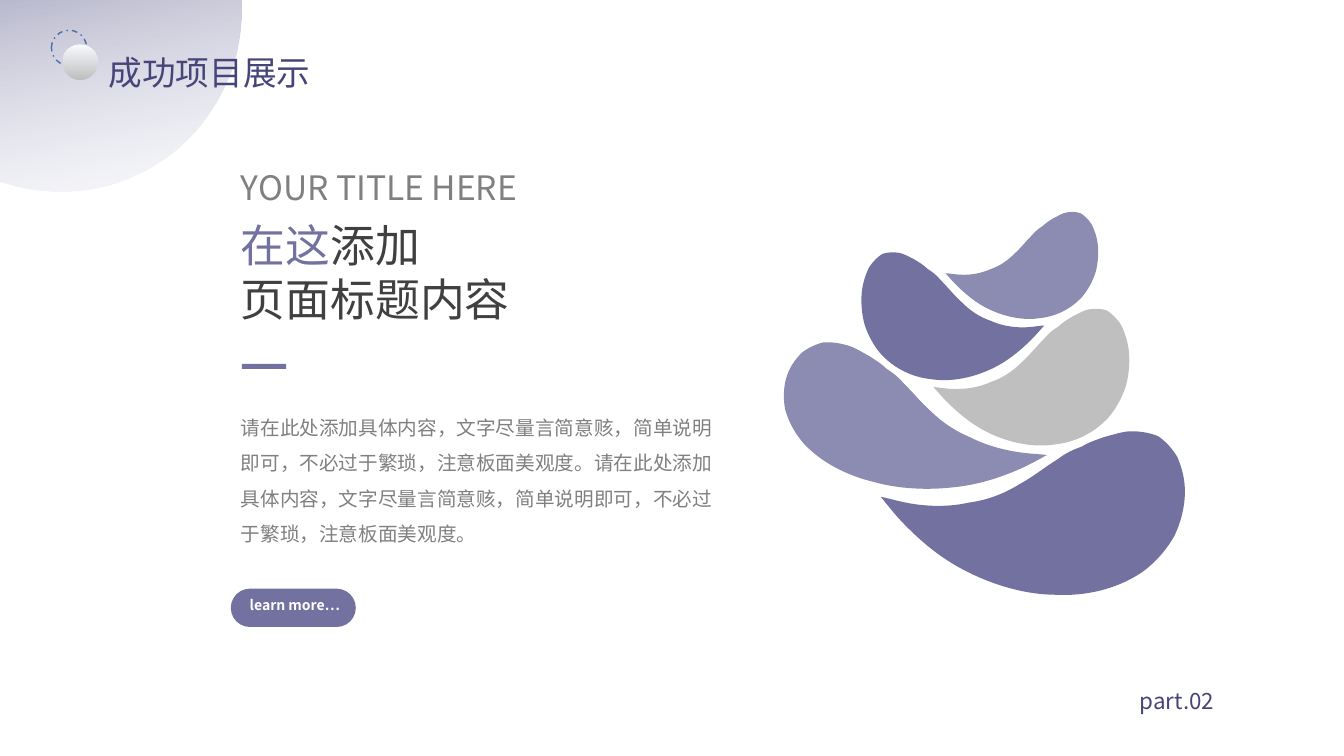
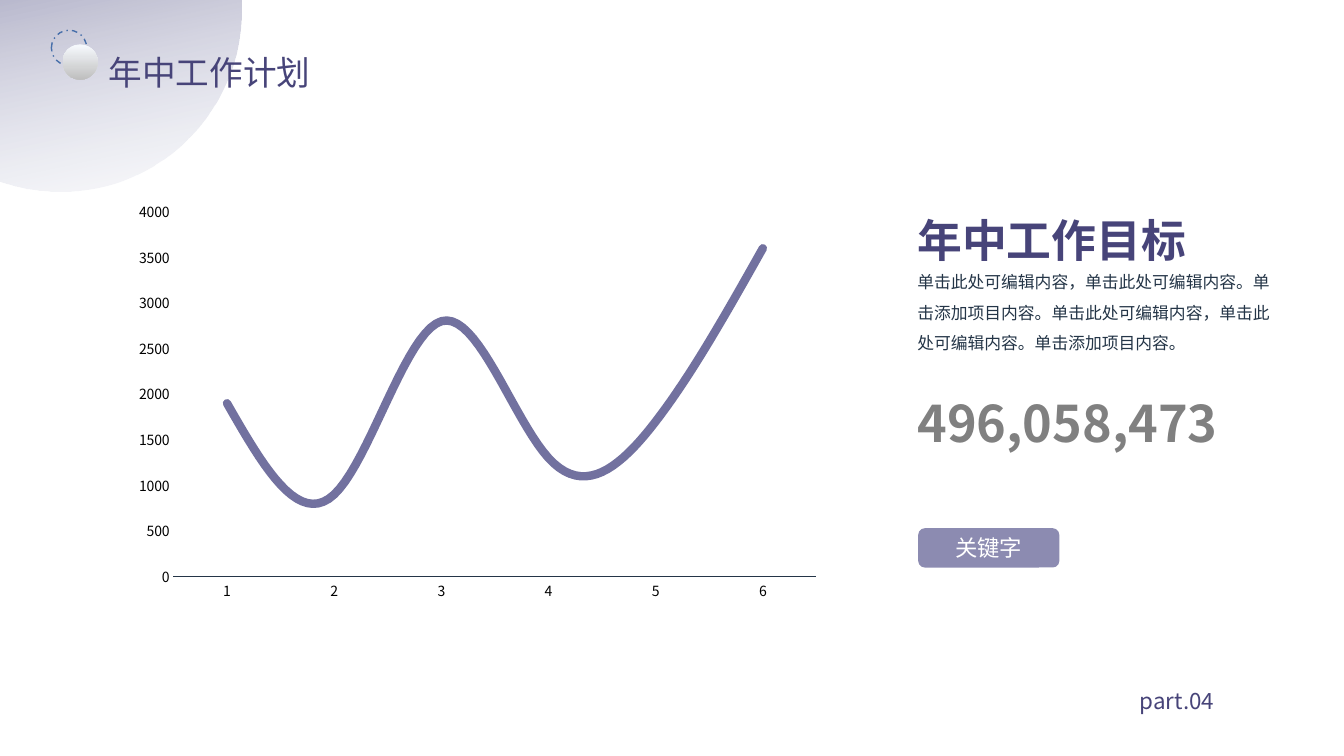
from lxml.etree import SubElement
from pptx import Presentation
from pptx.chart.data import CategoryChartData
from pptx.dml.color import RGBColor
from pptx.enum.chart import XL_CHART_TYPE, XL_MARKER_STYLE, XL_TICK_MARK
from pptx.enum.dml import MSO_LINE
from pptx.enum.shapes import MSO_SHAPE as SHAPE
from pptx.enum.text import MSO_ANCHOR, MSO_AUTO_SIZE, PP_ALIGN as ALIGN
from pptx.oxml.ns import qn
from pptx.util import Pt

PX = 9144
FONT = "Noto Sans CJK SC"

INDIGO = RGBColor(0x47, 0x44, 0x79)
VIOLET = RGBColor(0x72, 0x71, 0x9F)
LILAC = RGBColor(0x8C, 0x8B, 0xB1)
SILVER = RGBColor(0xBF, 0xBF, 0xBF)
GRAY = RGBColor(0x80, 0x80, 0x80)
CHARCOAL = RGBColor(0x40, 0x40, 0x40)
NAVY = RGBColor(0x24, 0x35, 0x47)
BLUE = RGBColor(0x47, 0x6F, 0xAA)
ICE = RGBColor(0xF7, 0xFA, 0xFE)
WHITE = RGBColor(0xFF, 0xFF, 0xFF)
BLACK = RGBColor(0, 0, 0)

PROJECT = dict(
    title="成功项目展示",
    part="part.02",
    kicker="YOUR TITLE HERE",
    heading=[[("在这", VIOLET), ("添加", None)], [("页面标题内容", None)]],
    body="请在此处添加具体内容，文字尽量言简意赅，简单说明即可，不必过于繁琐，注意板面美观度。"
         "请在此处添加具体内容，文字尽量言简意赅，简单说明即可，不必过于繁琐，注意板面美观度。",
    button="learn more…",
)
PLAN = dict(
    title="年中工作计划",
    part="part.04",
    heading="年中工作目标",
    body="单击此处可编辑内容，单击此处可编辑内容。单击添加项目内容。"
         "单击此处可编辑内容，单击此处可编辑内容。单击添加项目内容。",
    figure="496,058,473",
    keyword="关键字",
    months=["1", "2", "3", "4", "5", "6"],
    values=[1900, 900, 2800, 1300, 1700, 3600],
)

LEAF_SIZE = (195, 138)
LEAF_START = (0, 78)
LEAF_CURVES = [
    ((3, 81), (10, 90), (20, 99)),
    ((31, 109), (45, 120), (63, 127)),
    ((80, 134), (101, 138), (120, 135)),
    ((140, 133), (158, 124), (171, 111)),
    ((172, 110), (172, 110), (173, 109)),
    ((181, 100), (187, 89), (191, 77)),
    ((194, 66), (195, 54), (194, 43)),
    ((193, 33), (190, 24), (186, 16)),
    ((182, 10), (177, 5), (172, 2)),
    ((166, 0), (160, 0), (154, 1)),
    ((149, 2), (144, 5), (138, 8)),
    ((133, 11), (128, 14), (124, 18)),
    ((119, 21), (114, 25), (110, 30)),
    ((110, 30), (109, 31), (109, 31)),
    ((102, 38), (96, 46), (87, 54)),
    ((79, 62), (69, 69), (57, 73)),
    ((46, 78), (34, 80), (23, 80)),
    ((13, 80), (4, 78), (0, 78)),
]
LEAVES = [
    ((926, 306, 195, 138), False, 0, SILVER),
    ((854, 250, 182, 129), True, 0, VIOLET),
    ((938, 210, 152, 108), False, 0, LILAC),
    ((874, 414, 300, 176), False, 7.8, VIOLET),
    ((773, 354, 269, 133), True, 9.6, LILAC),
]


def emu(box):
    return [length * PX for length in box]


def add_shape(slide, kind, box, color=None):
    shape = slide.shapes.add_shape(kind, *emu(box))
    shape.shadow.inherit = False
    shape.line.fill.background()
    if color is None:
        shape.fill.background()
    else:
        shape.fill.solid()
        shape.fill.fore_color.rgb = color
    return shape


def add_gradient_circle(slide, box, end, opacity=100):
    circle = add_shape(slide, SHAPE.OVAL, box)
    circle.fill.gradient()
    circle.fill.gradient_angle = 270
    for stop, color, position in zip(circle.fill.gradient_stops, (ICE, end), (0, 1)):
        stop.color.rgb = color
        stop.position = position
    if opacity < 100:
        first_color = next(circle._element.iter(qn("a:srgbClr")))
        SubElement(first_color, qn("a:alpha"), val=str(opacity * 1000))
    return circle


def write(frame, paragraphs, size, color, bold=False, align=ALIGN.LEFT, spacing=None):
    if isinstance(paragraphs, str):
        paragraphs = [[(paragraphs, None)]]
    for index, runs in enumerate(paragraphs):
        paragraph = frame.add_paragraph() if index else frame.paragraphs[0]
        paragraph.alignment = align
        if spacing:
            paragraph.line_spacing = spacing
        font = paragraph.font
        font.size, font.bold, font.name = Pt(size), bold, FONT
        font.color.rgb = color
        defaults = paragraph._p.pPr.find(qn("a:defRPr"))
        SubElement(defaults, qn("a:ea"), typeface=FONT)
        for text, run_color in runs:
            run = paragraph.add_run()
            run.text = text
            if run_color is not None:
                run.font.color.rgb = run_color


def add_text(slide, box, paragraphs, size, color, wrap=True, grow=True,
             inset=(10, 5), **style):
    frame = slide.shapes.add_textbox(*emu(box)).text_frame
    frame.word_wrap = wrap
    frame.auto_size = MSO_AUTO_SIZE.SHAPE_TO_FIT_TEXT if grow else MSO_AUTO_SIZE.NONE
    frame.margin_left = frame.margin_right = inset[0] * PX
    frame.margin_top = frame.margin_bottom = inset[1] * PX
    write(frame, paragraphs, size, color, **style)


def lines_to_curves(shape):
    lines = list(shape._element.iter(qn("a:lnTo")))
    for first in range(0, len(lines), 3):
        group = lines[first:first + 3]
        outline = group[0].getparent()
        curve = SubElement(outline, qn("a:cubicBezTo"))
        group[0].addprevious(curve)
        for line in group:
            curve.append(line[0])
            outline.remove(line)


def add_leaf(slide, box, mirrored, rotation, color):
    left, top, width, height = emu(box)
    points = []
    for x, y in [LEAF_START, *(point for curve in LEAF_CURVES for point in curve)]:
        across = x / LEAF_SIZE[0]
        across = 1 - across if mirrored else across
        points.append((round(left + across * width),
                       round(top + y / LEAF_SIZE[1] * height)))
    builder = slide.shapes.build_freeform(*points[0])
    builder.add_line_segments(points[1:], close=True)
    leaf = builder.convert_to_shape()
    lines_to_curves(leaf)
    leaf.shadow.inherit = False
    leaf.fill.solid()
    leaf.fill.fore_color.rgb = color
    leaf.line.fill.background()
    leaf.rotation = rotation


def add_framed_slide(presentation, content):
    slide = presentation.slides.add_slide(presentation.slide_layouts[6])
    add_gradient_circle(slide, (-121, -173, 360, 363), INDIGO, 29).rotation = 168
    ring = add_shape(slide, SHAPE.OVAL, (51, 30, 35, 35))
    ring.line.color.rgb = BLUE
    ring.line.width = Pt(1)
    ring.line.dash_style = MSO_LINE.DASH_DOT
    add_gradient_circle(slide, (62, 44, 35, 35), SILVER)
    for box, key, size in (((98, 27, 319, 64), "title", 24),
                           ((1121, 663, 155, 46), "part", 16)):
        add_text(slide, box, content[key], size, INDIGO,
                 align=ALIGN.JUSTIFY, spacing=1.5)
    return slide


def add_line_chart(slide, box, categories, values):
    data = CategoryChartData()
    data.categories = categories
    data.add_series("Series 1", values)
    chart = slide.shapes.add_chart(XL_CHART_TYPE.LINE, *emu(box), data).chart
    chart.has_legend = chart.has_title = False
    chart.font.size = Pt(10)
    chart.font.name = FONT
    chart.font.color.rgb = BLACK
    for axis in (chart.category_axis, chart.value_axis):
        axis.has_major_gridlines = False
        axis.major_tick_mark = axis.minor_tick_mark = XL_TICK_MARK.NONE
    chart.category_axis.format.line.color.rgb = NAVY
    chart.category_axis.format.line.width = Pt(1)
    chart.value_axis.format.line.fill.background()
    chart.value_axis.minimum_scale = 0
    chart.value_axis.maximum_scale = 4000
    chart.value_axis.major_unit = 500
    plot = chart.plots[0]
    plot.vary_by_categories = False
    series = plot.series[0]
    series.smooth = True
    series.marker.style = XL_MARKER_STYLE.NONE
    series.format.line.color.rgb = VIOLET
    series.format.line.width = Pt(6)
    next(series._element.iter(qn("a:ln"))).set("cap", "rnd")


def build_project(presentation):
    slide = add_framed_slide(presentation, PROJECT)
    button = add_shape(slide, SHAPE.ROUNDED_RECTANGLE, (229, 584, 124, 38), VIOLET)
    button.adjustments[0] = 0.5
    add_text(slide, (230, 587, 125, 27), PROJECT["button"], 10, WHITE,
             bold=True, align=ALIGN.CENTER)
    add_shape(slide, SHAPE.RECTANGLE, (240, 361, 44, 5), VIOLET)
    add_text(slide, (229, 211, 289, 118), PROJECT["heading"], 32, CHARCOAL, wrap=False)
    add_text(slide, (229, 161, 348, 34), PROJECT["kicker"], 24, GRAY, grow=False)
    add_text(slide, (229, 396, 491, 151), PROJECT["body"], 14, GRAY, spacing=1.5)
    for leaf in LEAVES:
        add_leaf(slide, *leaf)


def build_plan(presentation):
    slide = add_framed_slide(presentation, PLAN)
    add_line_chart(slide, (124, 192, 700, 412), PLAN["months"], PLAN["values"])
    add_text(slide, (901, 255, 371, 100), PLAN["body"], 12, NAVY,
             inset=(9, 5), spacing=1.5)
    add_text(slide, (901, 184, 311, 71), PLAN["heading"], 32, INDIGO,
             inset=(9, 0), bold=True, spacing=1.5)
    add_text(slide, (901, 384, 328, 70), PLAN["figure"], 36, GRAY,
             wrap=False, inset=(9, 5), bold=True)
    tag = add_shape(slide, SHAPE.ROUNDED_RECTANGLE, (911, 524, 140, 39), LILAC)
    tag.text_frame.vertical_anchor = MSO_ANCHOR.MIDDLE
    write(tag.text_frame, PLAN["keyword"], 16, WHITE, align=ALIGN.CENTER)


def main():
    presentation = Presentation()
    presentation.slide_width = 4000 * PX // 3
    presentation.slide_height = 750 * PX
    build_project(presentation)
    build_plan(presentation)
    presentation.save("out.pptx")


if __name__ == "__main__":
    main()
